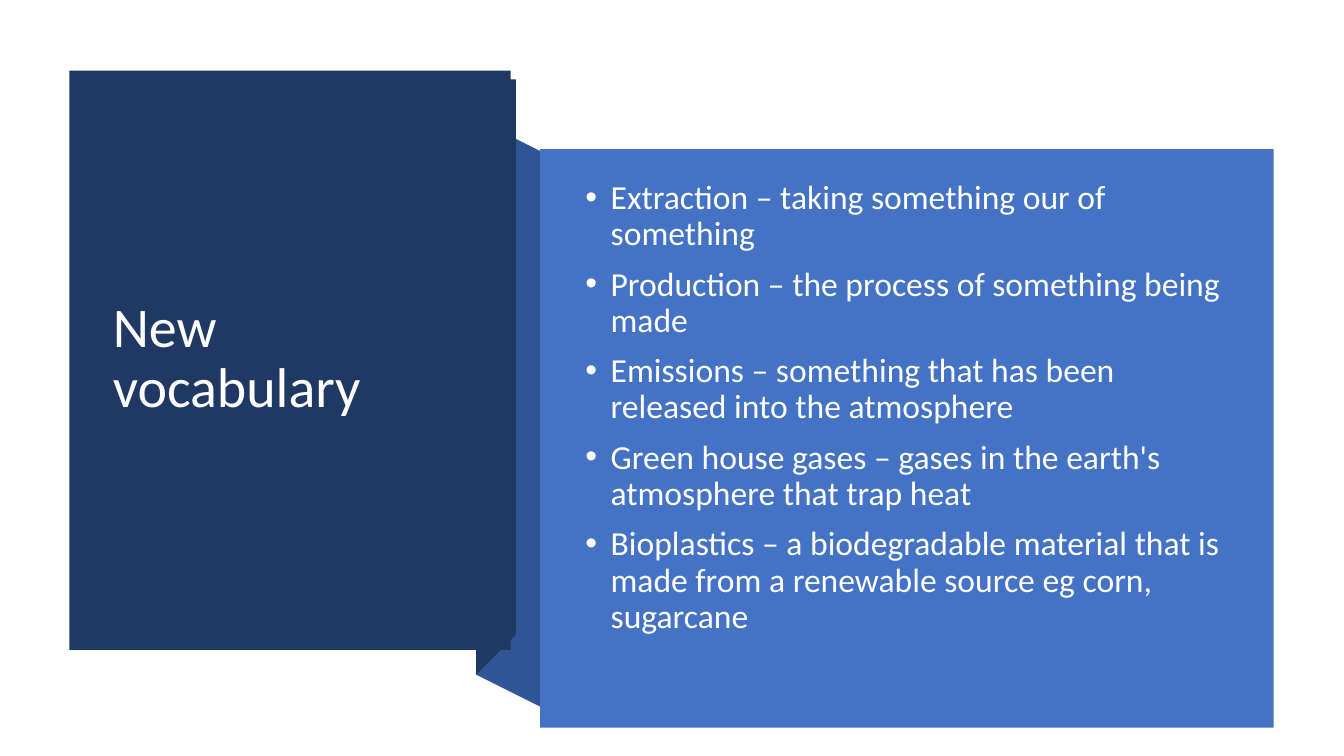
from pptx import Presentation
from pptx.dml.color import RGBColor
from pptx.enum.shapes import MSO_SHAPE
from pptx.enum.text import MSO_ANCHOR, MSO_AUTO_SIZE, PP_ALIGN
from pptx.oxml.ns import qn
from pptx.util import Cm, Pt
from lxml import etree

NAVY = RGBColor(0x20, 0x38, 0x64)
MID_BLUE = RGBColor(0x2F, 0x55, 0x97)
BLUE = RGBColor(0x44, 0x72, 0xC4)
WHITE = RGBColor(0xFF, 0xFF, 0xFF)
OFF_WHITE = RGBColor(0xFE, 0xFF, 0xFF)

VOCABULARY = [
    "Extraction – taking something our of something",
    "Production – the process of something being made",
    "Emissions – something that has been released into the atmosphere",
    "Green house gases – gases in the earth's atmosphere that trap heat",
    "Bioplastics – a biodegradable material that is made from a renewable source eg corn, sugarcane",
]


def paint(sp, color):
    sp.shadow.inherit = False
    sp.fill.solid()
    sp.fill.fore_color.rgb = color
    sp.line.fill.background()


def style(p, size, color):
    p.alignment = PP_ALIGN.LEFT
    p.line_spacing = 0.9
    p.font.name = "Calibri"
    p.font.size = Pt(size)
    p.font.color.rgb = color


prs = Presentation()
prs.slide_width, prs.slide_height = Cm(33.87), Cm(19.05)
s = prs.slides.add_slide(prs.slide_layouts[5])

folds = [
    (MID_BLUE, [(13.61, 18.36), (11.51, 17.07), (11.51, 2.51), (13.61, 3.81)]),
    (NAVY, [(12.87, 16.36), (11.51, 17.09), (11.51, 2.49), (12.87, 1.75)]),
]
for color, points in folds:
    builder = s.shapes.build_freeform(*points[0], scale=Cm(1))
    builder.add_line_segments(points[1:], close=True)
    paint(builder.convert_to_shape(), color)

panels = [
    (NAVY, 1.75, 1.78, 11.12, 14.6),
    (BLUE, 13.61, 3.76, 18.49, 14.58),
]
for color, *box in panels:
    paint(s.shapes.add_shape(MSO_SHAPE.RECTANGLE, *map(Cm, box)), color)

title = s.shapes.title
title.left, title.top, title.width, title.height = Cm(2.59), Cm(2.72), Cm(9.42), Cm(12.67)
title.element.getparent().append(title.element)
tf = title.text_frame
tf.text = "New vocabulary"
tf.word_wrap = True
tf.auto_size = MSO_AUTO_SIZE.NONE
tf.vertical_anchor = MSO_ANCHOR.MIDDLE
style(tf.paragraphs[0], 40, WHITE)

tf = s.shapes.add_textbox(Cm(14.5), Cm(4.55), Cm(16.54), Cm(12.26)).text_frame
tf.word_wrap = True
tf.vertical_anchor = MSO_ANCHOR.TOP
tf.margin_top = 0
for i, entry in enumerate(VOCABULARY):
    p = tf.add_paragraph() if i else tf.paragraphs[0]
    p.text = entry
    style(p, 24, OFF_WHITE)
    p.space_before = Pt(10 if i else 0)
    pPr = p._p.get_or_add_pPr()
    pPr.set("marL", str(Cm(0.64)))
    pPr.set("indent", str(-Cm(0.64)))
    bullet_font = etree.Element(qn("a:buFont"), typeface="Arial")
    bullet = etree.Element(qn("a:buChar"), char="•")
    pPr.find(qn("a:defRPr")).addprevious(bullet_font)
    bullet_font.addnext(bullet)

prs.save("out.pptx")
